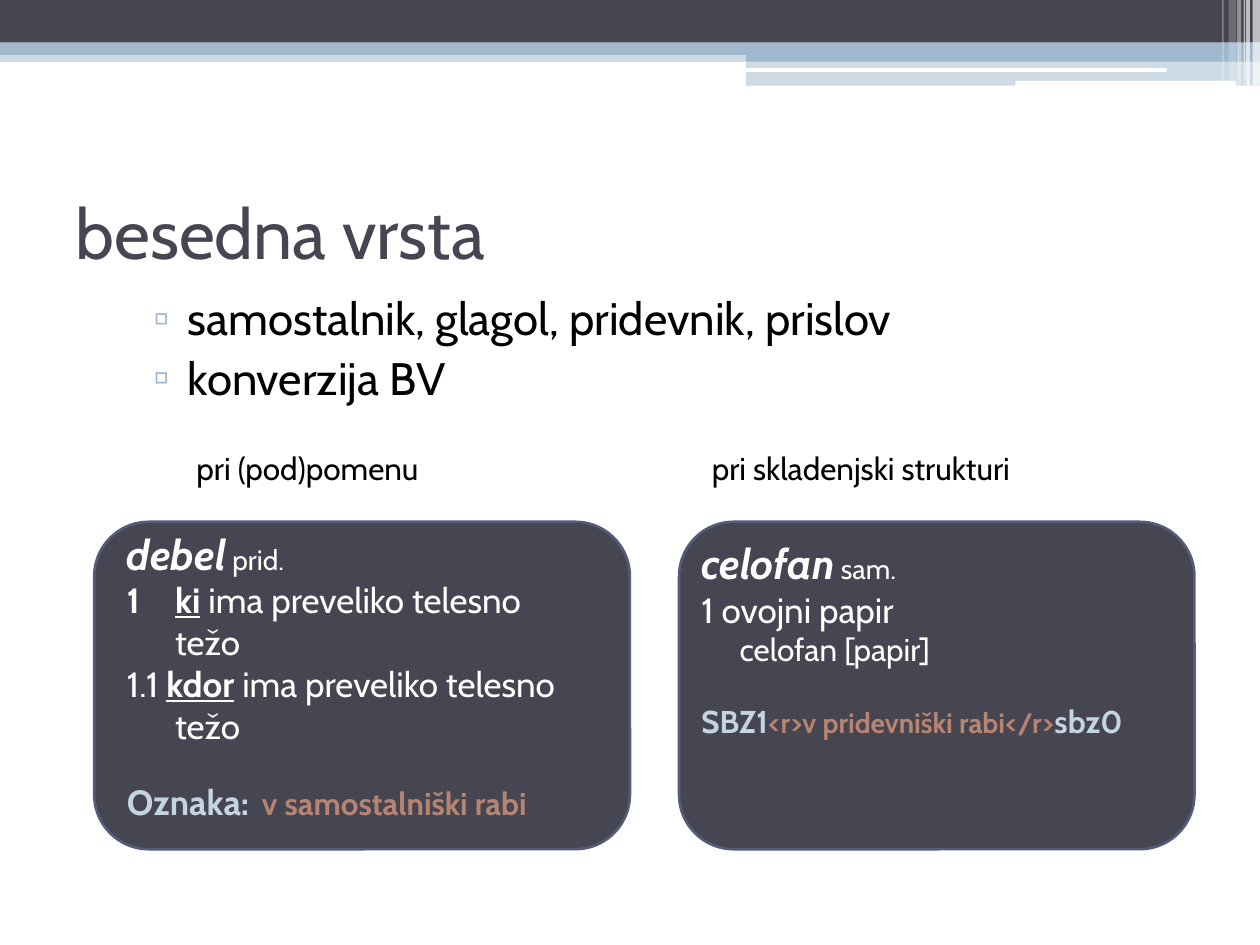
from dataclasses import dataclass
from lxml.etree import SubElement as Sub
from pptx import Presentation
from pptx.dml.color import RGBColor as Rgb
from pptx.enum.shapes import MSO_SHAPE as Kind
from pptx.enum.text import MSO_ANCHOR as Anchor, MSO_AUTO_SIZE as Fit, PP_ALIGN as Align
from pptx.oxml.ns import qn
from pptx.util import Cm, Pt


@dataclass
class Theme:
    font: str = "Cabin"
    dark: str = "464653"
    blue: str = "9FB8CD"
    white: str = "FFFFFF"
    black: str = "000000"
    edge: str = "545C79"
    pale: str = "C5D4E1"
    rust: str = "B88472"
    head: int = 40
    list: int = 26
    word: int = 24
    sense: int = 20
    note: int = 18
    small: int = 16


T = Theme()

STYLES = {
    "head": (T.head, T.dark, ""),
    "list": (T.list, T.black, ""),
    "label": (T.note, T.black, ""),
    "word": (T.word, T.white, "bi"),
    "gap": (T.small, T.white, "bi"),
    "class": (T.small, T.white, ""),
    "sense": (T.sense, T.white, ""),
    "key": (T.sense, T.white, "bu"),
    "use": (T.note, T.white, ""),
    "tag": (T.sense, T.pale, "b"),
    "code": (T.note, T.pale, "b"),
    "mark": (T.note, T.rust, "b"),
    "field": (T.small, T.rust, "b"),
}

TITLE = "besedna vrsta"
ITEMS = ["samostalnik, glagol, pridevnik, prislov", "konverzija BV"]
HANG = (0.97, -0.97)
FLAT = (0, 0)
BLANK = 19.4

CARDS = [
    {
        "label": ("pri (pod)pomenu", 3.71, 7.01),
        "box": (1.9, 10.52, 10.8, 6.6),
        "text": (2.31, 10.52, 9.73, 7.01),
        "lines": [
            (FLAT, 0, "", [("debel", "word"), (" ", "gap"), ("prid.", "class")]),
            (HANG, 0, "num", [("ki", "key"), (" ima preveliko telesno težo", "sense")]),
            (HANG, 0, "", [("1.1 ", "sense"), ("kdor", "key"),
                           (" ima preveliko telesno težo", "sense")]),
            (HANG, BLANK, "", [("Oznaka:", "tag"), (" ", "class"),
                               ("v samostalniški rabi", "mark")]),
        ],
    },
    {
        "label": ("pri skladenjski strukturi", 14.1, 8.99),
        "box": (13.69, 10.52, 10.39, 6.6),
        "text": (13.89, 10.72, 10.01, 5.05),
        "lines": [
            (FLAT, 0, "", [("celofan", "word"), (" ", "gap"), ("sam.", "class")]),
            (FLAT, 0, "", [("1 ovojni papir", "sense")]),
            ((0.77, 0), 0, "", [("celofan [papir]", "use")]),
            (FLAT, BLANK, "", [("SBZ1", "code"),
                               ("<r>v pridevniški rabi</r>", "field"), ("sbz0", "code")]),
        ],
    },
]

BANDS = [
    (0, 1.02, 25.4, 0.23, T.blue, 50),
    (0, 0, 25.4, 0.86, T.dark, 100),
    (0, 0.86, 25.4, 0.25, T.blue, 100),
    (15.04, 0.99, 10.36, 0.25, T.blue, 100),
    (15.04, 1.22, 10.36, 0.51, T.blue, 50),
]
BARS = [(15.01, 1.37, 8.51, 0.08), (20.47, 1.63, 4.45, 0.1)]
STRIPES = [
    (25.25, 0.15, 1.73, 65),
    (25.12, 0.08, 1.73, 65),
    (25.07, 0.03, 1.73, 60),
    (24.94, 0.08, 1.73, 40),
    (24.77, 0.15, 1.63, 20),
    (24.64, 0.03, 1.63, 30),
]


def draw(slide, kind, box, fill, alpha=100, edge=None):
    shape = slide.shapes.add_shape(kind, *map(Cm, box))
    shape.shadow.inherit = False
    shape.fill.solid()
    shape.fill.fore_color.rgb = Rgb.from_string(fill)
    if alpha < 100:
        clr = shape._element.spPr.find(qn("a:solidFill"))[0]
        Sub(clr, qn("a:alpha")).set("val", str(alpha * 1000))
    if edge:
        shape.line.color.rgb = Rgb.from_string(edge)
        shape.line.width = Pt(1.5)
    else:
        shape.line.fill.background()
    return shape


def paint(run, name):
    size, ink, flags = STYLES[name]
    font = run.font
    font.name, font.size = T.font, Pt(size)
    font.color.rgb = Rgb.from_string(ink)
    font.bold, font.italic, font.underline = ("b" in flags, "i" in flags, "u" in flags)


def indent(para, left, first):
    props = para._p.get_or_add_pPr()
    props.set("marL", str(Cm(left)))
    props.set("indent", str(Cm(first)))
    return props


def place(shape, box):
    shape.left, shape.top, shape.width, shape.height = map(Cm, box)
    shape.text_frame.auto_size = Fit.NONE


def label(slide, text, left, width):
    box = slide.shapes.add_textbox(Cm(left), Cm(8.92), Cm(width), Cm(1.02))
    box.text_frame.word_wrap = True
    box.text_frame.text = text
    paint(box.text_frame.paragraphs[0].runs[0], "label")


def entry(slide, box, lines):
    frame = slide.shapes.add_textbox(*map(Cm, box)).text_frame
    frame.word_wrap = True
    for i, (dent, before, bullet, parts) in enumerate(lines):
        para = frame.add_paragraph() if i else frame.paragraphs[0]
        para.space_before = Pt(before)
        props = indent(para, *dent)
        if bullet:
            Sub(props, qn("a:buFontTx"))
            Sub(props, qn("a:buAutoNum")).set("type", "arabicPlain")
        for text, name in parts:
            run = para.add_run()
            run.text = text
            paint(run, name)
            if text == " " and name == "class":
                run._r.get_or_add_rPr().set("spc", "370")


def main():
    deck = Presentation()
    deck.slide_width, deck.slide_height = Cm(25.4), Cm(19.05)
    slide = deck.slides.add_slide(deck.slide_layouts[1])

    for *box, fill, alpha in BANDS:
        draw(slide, Kind.RECTANGLE, box, fill, alpha)
    for box in BARS:
        draw(slide, Kind.ROUNDED_RECTANGLE, box, T.white)
    for left, width, height, alpha in STRIPES:
        draw(slide, Kind.RECTANGLE, (left, 0, width, height), T.white, alpha)

    title, body = slide.placeholders
    place(title, (1.27, 3.18, 22.86, 2.97))
    title.text_frame.text = TITLE
    title.text_frame.vertical_anchor = Anchor.MIDDLE
    head = title.text_frame.paragraphs[0]
    head.alignment = Align.LEFT
    paint(head.runs[0], "head")

    place(body, (1.7, 5.72, 22.76, 11.2))
    body.text_frame.text = "\n".join(ITEMS)
    for para in body.text_frame.paragraphs:
        para.level = 1
        para.space_before = Pt(3)
        props = indent(para, 1.83, -0.69)
        Sub(Sub(props, qn("a:buClr")), qn("a:srgbClr")).set("val", T.blue)
        Sub(props, qn("a:buChar")).set("char", "▫")
        paint(para.runs[0], "list")

    for card in CARDS:
        draw(slide, Kind.ROUNDED_RECTANGLE, card["box"], T.dark, edge=T.edge)
        entry(slide, card["text"], card["lines"])
        label(slide, *card["label"])

    deck.save("out.pptx")


if __name__ == "__main__":
    main()
